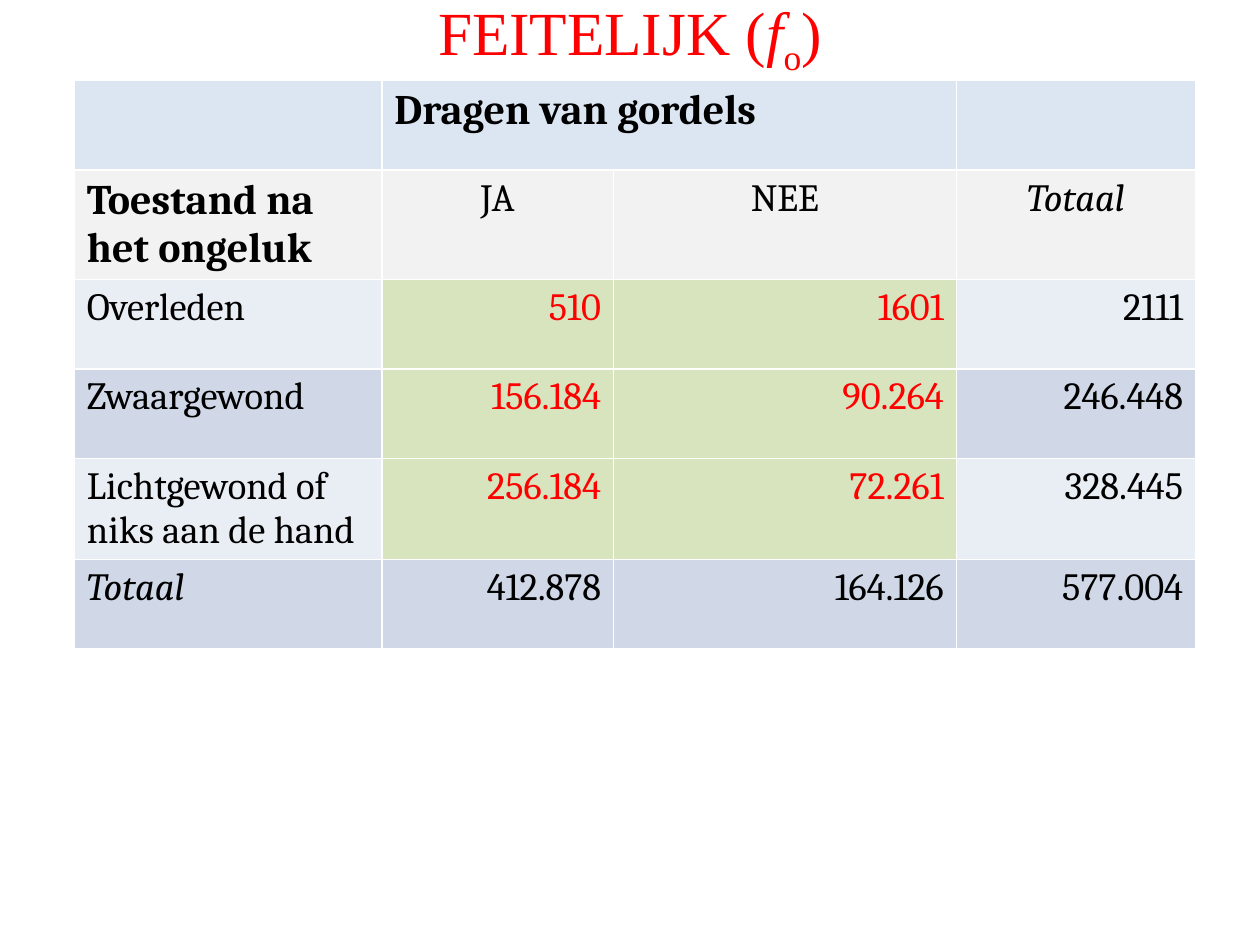
from lxml import etree
from pptx import Presentation
from pptx.dml.color import RGBColor
from pptx.enum.text import MSO_ANCHOR as Anchor, PP_ALIGN as Align
from pptx.oxml.ns import qn
from pptx.util import Inches, Pt

COLORS = {
    "red": "FF0000", "black": "000000", "white": "FFFFFF",
    "header": "DCE6F2", "subheader": "F2F2F2", "observed": "D7E4BD",
    "light_band": "E9EDF4", "dark_band": "D0D8E8",
}
COLUMN_WIDTHS = [2.44, 1.84, 2.72, 1.9]
ROW_HEIGHTS = [0.71, 0.84, 0.71, 0.71, 0.77, 0.71]
ROWS = [
    ["", "Dragen van gordels", "", ""],
    ["Toestand na het ongeluk", "JA", "NEE", "Totaal"],
    ["Overleden", "510", "1601", "2111"],
    ["Zwaargewond", "156.184", "90.264", "246.448"],
    ["Lichtgewond of\nniks aan de hand", "256.184", "72.261", "328.445"],
    ["Totaal", "412.878", "164.126", "577.004"],
]
HEADINGS = {"Dragen van gordels", "Toestand na het ongeluk"}


def color(name):
    return RGBColor.from_string(COLORS[name])


def add_title(slide, left, top, width, height):
    title = slide.shapes.title
    title.left, title.top = Inches(left), Inches(top)
    title.width, title.height = Inches(width), Inches(height)
    title.text_frame.vertical_anchor = Anchor.MIDDLE
    paragraph = title.text_frame.paragraphs[0]
    paragraph.alignment = Align.CENTER
    for text in ("FEITELIJK (", "f", "o", ")"):
        run = paragraph.add_run()
        run.text = text
        run.font.name = "Times New Roman"
        run.font.size = Pt(35)
        run.font.color.rgb = color("red")
        run.font.italic = text == "f"
        if text == "o":  # subscript
            run.font._element.set("baseline", "-25000")


def set_borders(cell):
    properties = cell._tc.get_or_add_tcPr()
    for position, side in enumerate(("lnL", "lnR", "lnT", "lnB")):
        line = etree.Element(qn(f"a:{side}"), w=str(Pt(1)))
        fill = etree.SubElement(line, qn("a:solidFill"))
        etree.SubElement(fill, qn("a:srgbClr"), val=COLORS["white"])
        properties.insert(position, line)


def fill_name(row, column):
    if row < 2:
        return ("header", "subheader")[row]
    if row < 5 and column in (1, 2):
        return "observed"
    return "dark_band" if row % 2 or row == 5 else "light_band"


def format_cell(cell, row, column):
    text = ROWS[row][column]
    fill = fill_name(row, column)
    cell.fill.solid()
    cell.fill.fore_color.rgb = color(fill)
    set_borders(cell)
    if not text:
        return
    cell.text_frame.text = text
    if column == 0 or row == 0:
        alignment = Align.LEFT
    else:
        alignment = Align.CENTER if row == 1 else Align.RIGHT
    for paragraph in cell.text_frame.paragraphs:
        paragraph.alignment = alignment
        for run in paragraph.runs:
            run.font.name = "Cambria"
            run.font.size = Pt(24 if text in HEADINGS else 22)
            run.font.bold = text in HEADINGS
            run.font.italic = text == "Totaal"
            run.font.color.rgb = color("red" if fill == "observed" else "black")


def add_frequency_table(slide, left, top, width, height):
    table = slide.shapes.add_table(
        len(ROWS), len(COLUMN_WIDTHS),
        Inches(left), Inches(top), Inches(width), Inches(height)).table
    for column, column_width in zip(table.columns, COLUMN_WIDTHS):
        column.width = Inches(column_width)
    for row, row_height in zip(table.rows, ROW_HEIGHTS):
        row.height = Inches(row_height)
    table.cell(0, 1).merge(table.cell(0, 2))
    for row in range(len(ROWS)):
        for column in range(len(COLUMN_WIDTHS)):
            format_cell(table.cell(row, column), row, column)


def main():
    presentation = Presentation()
    presentation.slide_width, presentation.slide_height = Inches(10), Inches(7.5)
    slide = presentation.slides.add_slide(presentation.slide_layouts[5])
    # Title
    add_title(slide, 0.5, -0.03, 9, 0.63)
    # Observed frequencies
    add_frequency_table(slide, 0.59, 0.64, sum(COLUMN_WIDTHS), sum(ROW_HEIGHTS))
    presentation.save("out.pptx")


if __name__ == "__main__":
    main()
